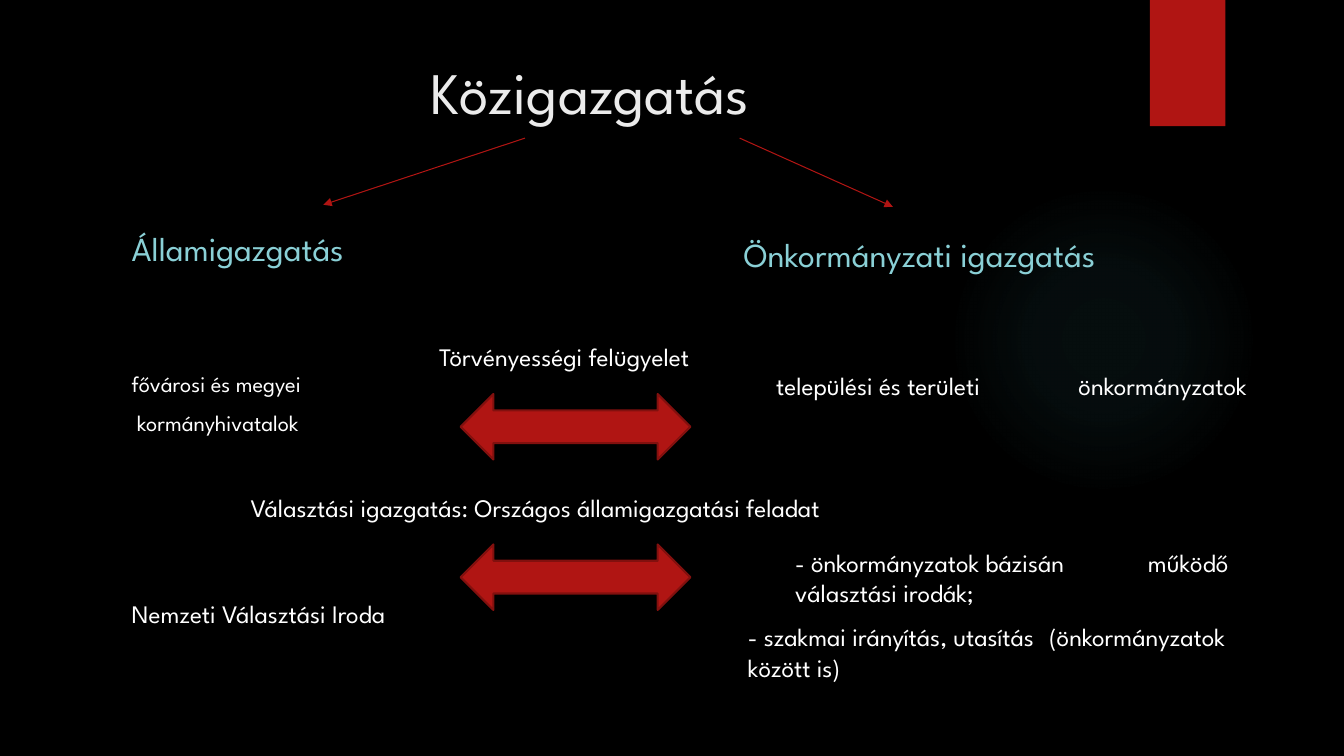
"""Build the slide on the two branches of public administration."""
from lxml.etree import SubElement
from pptx import Presentation
from pptx.dml.color import RGBColor
from pptx.enum.shapes import MSO_CONNECTOR as Connector, MSO_SHAPE as Shape
from pptx.enum.text import MSO_ANCHOR as Anchor, PP_ALIGN as Align
from pptx.oxml.ns import qn
from pptx.util import Cm, Pt

FONT = "League Spartan"
COLORS = {"background": "000000", "title": "EBEBEB", "heading": "8AD0D6",
          "text": "FFFFFF", "red": "B01513", "outline": "82100E", "glow": "50B9C1"}

TITLE = "Közigazgatás"
TITLE_BOX = (1.8, 1.27, 26.14, 3.89)
GLOW_BOX = (23.9, 4.65, 7.82, 7.82)
GLOW_STOPS = [(0, 7), (36, 6), (69, 0)]
RIBBON_BOX = (28.98, 0, 1.9, 3.18)
HEADINGS = [("Államigazgatás", (3.07, 5.28, 12.22, 1.6)),
            ("Önkormányzati igazgatás", (18.49, 5.44, 12.22, 1.6))]
BRANCHES = [((18.64, 3.48), (22.5, 5.21)), ((13.23, 3.48), (8.15, 5.16))]
LINKS = [("Törvényességi felügyelet", (10.82, 8.48, 8.1, 1.02), 9.93),
         ("Választási igazgatás: Országos államigazgatási feladat",
          (6.07, 12.29, 18.19, 1.02), 13.72)]
LINK_LEFT, LINK_WIDTH, LINK_HEIGHT = 11.61, 5.79, 1.65

STATE_BOX = (3.07, 9.2, 12.22, 8)
STATE_ITEMS = [
    (["fővárosi és megyei"], 16, 0, []),
    ([" kormányhivatalok"], 16, 9, []),
    (["Nemzeti Választási Iroda"], 18, 116, []),
]
LOCAL_BOX = (16.69, 9.2, 15.75, 8)
LOCAL_ITEMS = [
    (["\ttelepülési és területi\tönkormányzatok"], 18, 0, [2.62, 10.24]),
    (["\t- önkormányzatok bázisán\tműködő", "\tválasztási irodák;"],
     18, 105, [3.1, 5.03, 11.99]),
    (["\t- szakmai irányítás, utasítás\t(önkormányzatok", "\tközött is)"],
     18, 10, [1.91, 6.12, 9.5]),
]


def rgb(name):
    return RGBColor.from_string(COLORS[name])


def lengths(values):
    return [Cm(value) for value in values]


def add_run(paragraph, text, size, color):
    run = paragraph.add_run()
    run.text = text
    run.font.name = FONT
    run.font.size = Pt(size)
    run.font.color.rgb = rgb(color)


def add_text(slide, box, items, color="text", anchor=Anchor.TOP):
    frame = slide.shapes.add_textbox(*lengths(box)).text_frame
    frame.word_wrap = True
    frame.vertical_anchor = anchor
    for index, (lines, size, gap, stops) in enumerate(items):
        paragraph = frame.add_paragraph() if index else frame.paragraphs[0]
        if gap:
            paragraph.space_before = Pt(gap)
        if stops:
            tabs = SubElement(paragraph._p.get_or_add_pPr(), qn("a:tabLst"))
            for stop in stops:
                SubElement(tabs, qn("a:tab"), pos=str(int(Cm(stop))), algn="l")
        for number, line in enumerate(lines):
            if number:
                paragraph.add_line_break()
            add_run(paragraph, line, size, color)


def add_shape(slide, kind, box, outline=None):
    shape = slide.shapes.add_shape(kind, *lengths(box))
    shape.shadow.inherit = False
    shape.fill.solid()
    shape.fill.fore_color.rgb = rgb("red")
    if outline:
        shape.line.color.rgb = rgb(outline)
        shape.line.width = Pt(1.5)
    else:
        shape.line.fill.background()
    return shape


def add_glow(slide):
    properties = add_shape(slide, Shape.OVAL, GLOW_BOX)._element.spPr
    gradient = SubElement(properties, qn("a:gradFill"), rotWithShape="1")
    stops = SubElement(gradient, qn("a:gsLst"))
    for position, opacity in GLOW_STOPS:
        stop = SubElement(stops, qn("a:gs"), pos=str(position * 1000))
        color = SubElement(stop, qn("a:srgbClr"), val=COLORS["glow"])
        SubElement(color, qn("a:alpha"), val=str(opacity * 1000))
    path = SubElement(gradient, qn("a:path"), path="circle")
    SubElement(path, qn("a:fillToRect"), l="50000", t="50000", r="50000", b="50000")
    properties.replace(properties.find(qn("a:solidFill")), gradient)


def add_branch(slide, start, end):
    arrow = slide.shapes.add_connector(Connector.STRAIGHT, *lengths(start + end))
    arrow.line.color.rgb = rgb("red")
    arrow.line.width = Pt(0.75)
    SubElement(arrow.line._get_or_add_ln(), qn("a:tailEnd"), type="triangle")
    SubElement(arrow._element.spPr, qn("a:effectLst"))


def main():
    presentation = Presentation()
    presentation.slide_width, presentation.slide_height = lengths((33.87, 19.05))
    slide = presentation.slides.add_slide(presentation.slide_layouts[5])
    slide.background.fill.solid()
    slide.background.fill.fore_color.rgb = rgb("background")

    add_glow(slide)
    add_shape(slide, Shape.RECTANGLE, RIBBON_BOX)

    title = slide.shapes.title
    title.left, title.top, title.width, title.height = lengths(TITLE_BOX)
    title.text_frame.vertical_anchor = Anchor.TOP
    paragraph = title.text_frame.paragraphs[0]
    paragraph.alignment = Align.CENTER
    add_run(paragraph, TITLE, 42, "title")

    for heading, box in HEADINGS:
        add_text(slide, box, [([heading], 24, 0, [])], "heading", Anchor.BOTTOM)
    add_text(slide, STATE_BOX, STATE_ITEMS)
    add_text(slide, LOCAL_BOX, LOCAL_ITEMS)
    for start, end in BRANCHES:
        add_branch(slide, start, end)
    for label, box, top in LINKS:
        add_shape(slide, Shape.LEFT_RIGHT_ARROW,
                  (LINK_LEFT, top, LINK_WIDTH, LINK_HEIGHT), "outline")
        add_text(slide, box, [([label], 18, 0, [])])

    presentation.save("out.pptx")


if __name__ == "__main__":
    main()
